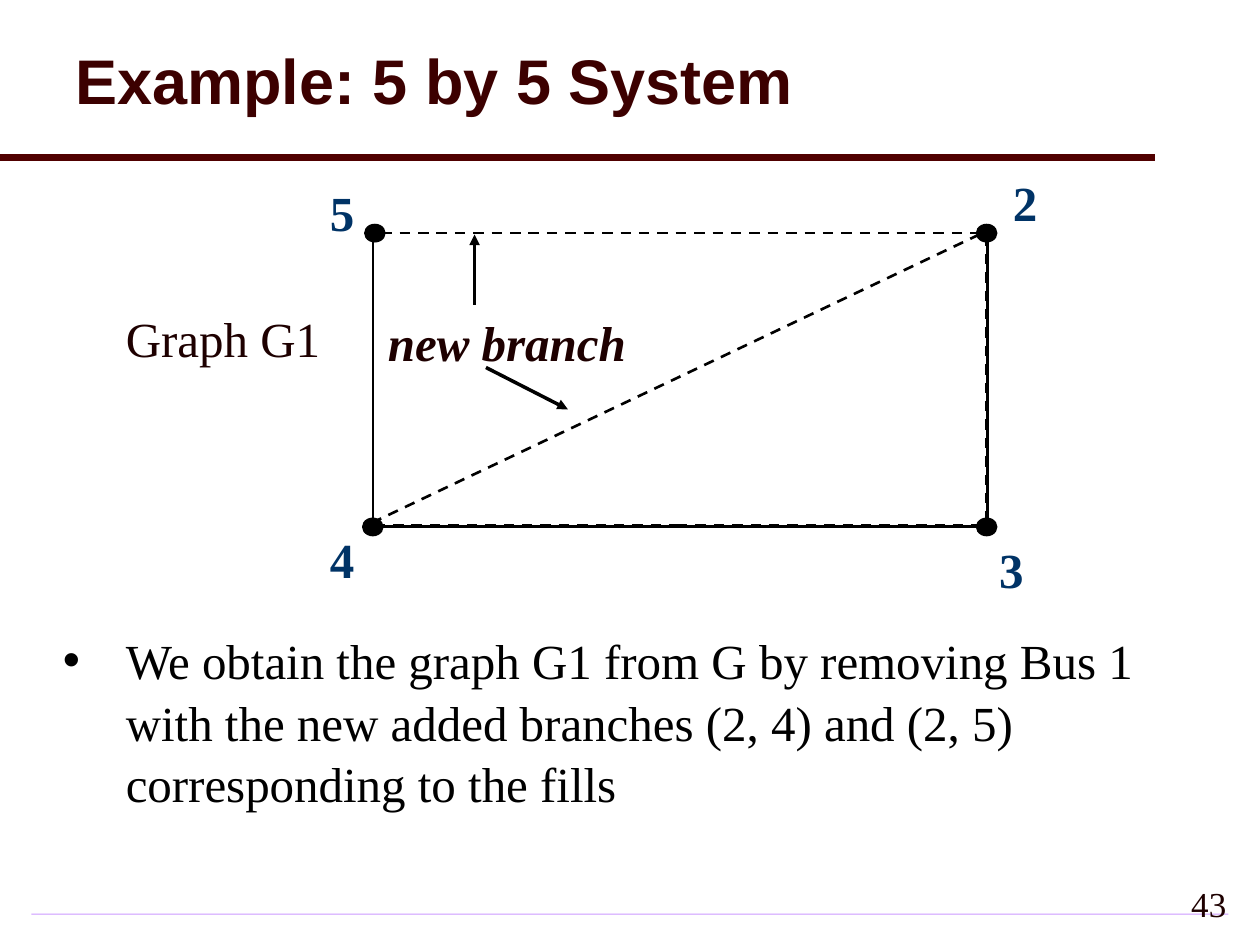
"""Build the slide on graph G1 of the 5 by 5 system example."""
from lxml import etree
from pptx import Presentation
from pptx.dml.color import RGBColor
from pptx.enum import dml, shapes, text
from pptx.oxml.ns import qn
from pptx.util import Pt

THEME = {
    "serif": "Times New Roman", "sans": "Arial",
    "title": "3C0000", "rule": "500000", "dark": "1E0000", "bus": "003366",
    "ink": "000000", "footer": "CC99FF",
    "title_size": 36, "body_size": 28, "number_size": 20,
}

TITLE = "Example: 5 by 5 System"
GRAPH_NAME = "Graph G1"
BRANCH_NOTE = "new branch"
BULLET = ("We obtain the graph G1 from G by removing Bus 1 with the new added "
          "branches (2, 4) and (2, 5) corresponding to the fills")
PAGE = "43"

LEFT, RIGHT, TOP, BOTTOM = 213.1, 564.3, 133.6, 300.8
BUS_LABELS = [("5", 181.4, 101), ("2", 571.7, 95), ("4", 181.4, 299), ("3", 563.8, 304.8)]
BUS_DOTS = [(208.4, 128.2), (207.2, 296.1), (558, 128.2), (558, 296.1)]
DOT_SIZE = (11.6, 10)
BRANCHES = [
    ((LEFT, TOP), (LEFT, BOTTOM), False),
    ((LEFT, BOTTOM), (RIGHT, BOTTOM), False),
    ((RIGHT, BOTTOM), (RIGHT, TOP), False),
    ((212.4, 298.8), (RIGHT, 131.8), True),
]
ARROWS = [((271.2, 174.2), (271.2, 134)), ((277.7, 210), (324.5, 233.9))]


def color(name):
    return RGBColor.from_string(THEME[name])


def add_text(slide, words, box, ink, size="body_size", face="serif", bold=False,
             italic=False, anchor=text.MSO_ANCHOR.TOP, align=text.PP_ALIGN.LEFT,
             spacing=1.0, indent=0):
    frame = slide.shapes.add_textbox(*map(Pt, box)).text_frame
    frame.word_wrap = True
    frame.vertical_anchor = anchor
    line = frame.paragraphs[0]
    line.text = words
    line.alignment = align
    line.line_spacing = spacing
    if indent:
        props = line._p.get_or_add_pPr()
        props.set("marL", str(Pt(indent)))
        props.set("indent", str(-Pt(indent)))
        etree.SubElement(props, qn("a:buFont")).set("typeface", THEME["sans"])
        etree.SubElement(props, qn("a:buChar")).set("char", "•")
    font = line.font
    font.name, font.size = THEME[face], Pt(THEME[size])
    font.bold, font.italic = bold, italic
    font.color.rgb = color(ink)


def add_line(slide, start, end, ink="ink", width=1.5, dashed=False, arrow=False):
    line = slide.shapes.add_connector(
        shapes.MSO_CONNECTOR.STRAIGHT, *map(Pt, start + end))
    line.line.color.rgb = color(ink)
    line.line.width = Pt(width)
    if dashed:
        line.line.dash_style = dml.MSO_LINE.DASH
    if arrow:
        etree.SubElement(line.line._get_or_add_ln(), qn("a:tailEnd")).set("type", "triangle")
    etree.SubElement(line._element.spPr, qn("a:effectLst"))


def add_figure(slide, kind, box, fill=None, line=None, width=0.75):
    figure = slide.shapes.add_shape(kind, *map(Pt, box))
    figure.shadow.inherit = False
    if fill:
        figure.fill.solid()
        figure.fill.fore_color.rgb = color(fill)
    else:
        figure.fill.background()
    if line:
        figure.line.color.rgb = color(line)
        figure.line.width = Pt(width)
    else:
        figure.line.fill.background()
    return figure


def add_graph(slide):
    outline = add_figure(slide, shapes.MSO_SHAPE.RECTANGLE,
                         (LEFT, 133.2, 350.6, 167), line="ink", width=1.5)
    outline.line.dash_style = dml.MSO_LINE.DASH
    for start, end, dashed in BRANCHES:
        add_line(slide, start, end, dashed=dashed)
    for bus, x, y in BUS_LABELS:
        add_text(slide, bus, (x, y, 34.6, 28), "bus", bold=True)
    for corner in BUS_DOTS:
        add_figure(slide, shapes.MSO_SHAPE.OVAL, corner + DOT_SIZE, "ink", "ink")
    add_text(slide, BRANCH_NOTE, (214.6, 175.2, 175.7, 28), "dark", bold=True, italic=True)
    for start, end in ARROWS:
        add_line(slide, start, end, width=2, arrow=True)


def main():
    deck = Presentation()
    deck.slide_width, deck.slide_height = Pt(720), Pt(540)
    slide = deck.slides.add_slide(deck.slide_layouts[6])
    add_figure(slide, shapes.MSO_SHAPE.RECTANGLE, (18, 522, 684, 0.72), "footer")
    add_line(slide, (0, 90), (660, 90), "rule", 4)
    add_text(slide, PAGE, (558, 498.2, 149.8, 36), "dark", "number_size",
             anchor=text.MSO_ANCHOR.MIDDLE, align=text.PP_ALIGN.RIGHT)
    add_text(slide, GRAPH_NAME, (64.8, 173, 140, 40), "dark")
    add_text(slide, BULLET, (28.8, 355, 637.2, 113), "ink", spacing=1.05, indent=36)
    add_graph(slide)
    add_text(slide, TITLE, (36, 5.8, 630, 84.2), "title", "title_size", "sans", bold=True,
             anchor=text.MSO_ANCHOR.MIDDLE, spacing=0.9)
    deck.save("out.pptx")


if __name__ == "__main__":
    main()
